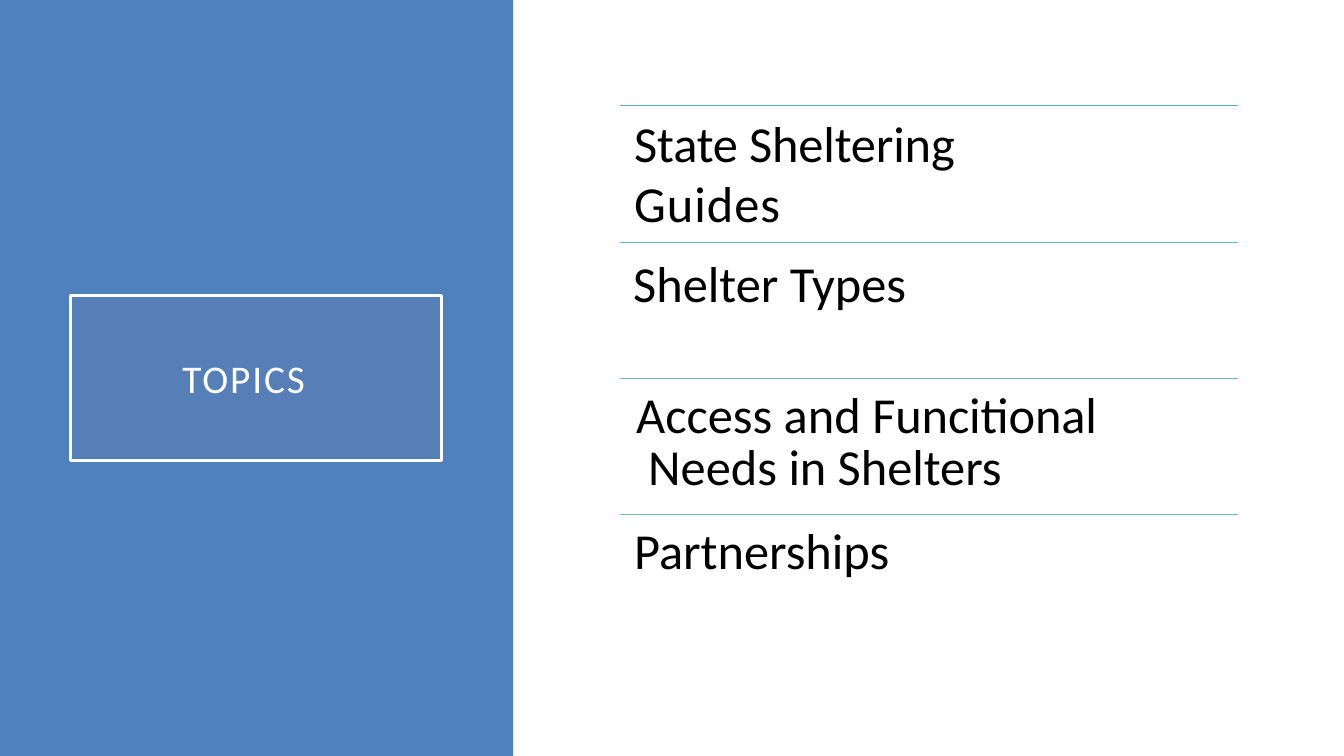
"""Build the Topics slide: a blue side panel and four ruled topic rows."""
from dataclasses import dataclass

from lxml.etree import SubElement
from pptx import Presentation
from pptx.dml.color import RGBColor
from pptx.enum.shapes import MSO_CONNECTOR as Connector, MSO_SHAPE as Preset
from pptx.enum.text import MSO_ANCHOR as Anchor, MSO_AUTO_SIZE as AutoSize, PP_ALIGN as Align
from pptx.oxml.ns import qn
from pptx.util import Emu, Inches, Pt

WIDTH, HEIGHT = Inches(13.33), Inches(7.5)
RULE_LEFT, RULE_RIGHT = 46.14, 92.12
FIRST_ROW, ROW_STEP = 14, 18
FONT = "Calibri"
COLOURS = {
    "panel": "4F81BD",
    "tint": "7E7A9A",
    "white": "FFFFFF",
    "text": "000000",
}


@dataclass(frozen=True)
class Span:
    """A run of text with its letter spacing in points."""
    text: str
    spacing: float = 0


@dataclass(frozen=True)
class Topic:
    """A topic row, with its box in percent of the slide."""
    spans: tuple[Span, ...]
    rule: str
    left: float
    drop: float
    width: float
    height: float
    inset: float = 0.01
    before: float = 1
    leading: float | None = None
    hang: float = 0
    is_title: bool = False


TOPICS = (
    Topic((Span("State Sheltering ", -0.1), Span("Guides", 0.7)),
          "57B6C0", 47.11, 0.67, 34.5, 16.4, is_title=True),
    Topic((Span("Shelter Types"),), "61BEBA", 47.04, 1.2, 21.08, 8.4),
    Topic((Span("Access and "), Span("Funcitional ", -0.1), Span("Needs "),
           Span("in ", -0.1), Span("Shelters")),
          "6CBDAF", 47.26, 0.4, 34.58, 15.33, inset=0.1, before=7, leading=37.5, hang=0.12),
    Topic((Span("Partnerships"),), "75BCA7", 47.11, 0.53, 33.31, 8.4),
)


def across(percent: float) -> Emu:
    """Turn a percentage of the slide width into a length."""
    return Emu(round(WIDTH * percent / 100))


def down(percent: float) -> Emu:
    """Turn a percentage of the slide height into a length."""
    return Emu(round(HEIGHT * percent / 100))


def colour(value: str) -> RGBColor:
    """Turn a hex string into a colour."""
    return RGBColor.from_string(value)


def set_frame(frame, anchor: Anchor, top: float = 0) -> None:
    """Set wrapping, anchor and insets of a text frame."""
    frame.word_wrap = True
    frame.auto_size = AutoSize.NONE
    frame.vertical_anchor = anchor
    frame.margin_left = frame.margin_right = frame.margin_bottom = 0
    frame.margin_top = Inches(top)


def add_spans(para, spans: tuple[Span, ...], size: float, ink: str) -> None:
    """Add formatted runs to a left-aligned paragraph."""
    para.alignment = Align.LEFT
    for item in spans:
        span = para.add_run()
        span.text = item.text
        span.font.name = FONT
        span.font.size = Pt(size)
        span.font.color.rgb = colour(ink)
        span._r.get_or_add_rPr().set("spc", str(round(item.spacing * 100)))


def indent(para, left: float, first: float = 0) -> None:
    """Set the left margin and first-line indent in inches."""
    props = para._p.get_or_add_pPr()
    props.set("marL", str(Inches(left)))
    props.set("indent", str(Inches(first)))


def add_rectangle(page, left: float, top: float, width: float, height: float, fill: str):
    """Add a plain filled rectangle, placed in percent of the slide."""
    box = page.shapes.add_shape(
        Preset.RECTANGLE, across(left), down(top), across(width), down(height))
    box.shadow.inherit = False
    box.fill.solid()
    box.fill.fore_color.rgb = colour(fill)
    box.line.fill.background()
    return box


def add_panel(page) -> None:
    """Draw the side panel and its framed heading."""
    add_rectangle(page, 0, 0, 38.18, 100, COLOURS["panel"])
    box = add_rectangle(page, 5.25, 39.07, 27.61, 21.87, COLOURS["tint"])
    tint = box._element.spPr.find(qn("a:solidFill")).find(qn("a:srgbClr"))
    SubElement(tint, qn("a:alpha")).set("val", "15000")
    box.line.color.rgb = colour(COLOURS["white"])
    box.line.width = Pt(2.5)
    set_frame(box.text_frame, Anchor.MIDDLE)
    para = box.text_frame.paragraphs[0]
    indent(para, 1.11)
    add_spans(para, (Span("TOPICS", 1.4),), 28, COLOURS["white"])


def add_topic(page, topic: Topic, row: int) -> None:
    """Draw one rule and the topic below it."""
    top = FIRST_ROW + ROW_STEP * row
    rule = page.shapes.add_connector(
        Connector.STRAIGHT, across(RULE_LEFT), down(top), across(RULE_RIGHT), down(top))
    rule.line.color.rgb = colour(topic.rule)
    rule.line.width = Pt(0.5)
    SubElement(rule._element.spPr, qn("a:effectLst"))

    box = page.shapes.title if topic.is_title else page.shapes.add_textbox(0, 0, 0, 0)
    box.left, box.top = across(topic.left), down(top + topic.drop)
    box.width, box.height = across(topic.width), down(topic.height)
    set_frame(box.text_frame, Anchor.TOP, topic.inset)
    para = box.text_frame.paragraphs[0]
    indent(para, 0.01 + topic.hang, -topic.hang)
    para.space_before = Pt(topic.before)
    if topic.leading:
        para.line_spacing = Pt(topic.leading)
    add_spans(para, topic.spans, 36, COLOURS["text"])


def main() -> None:
    """Build and save the deck."""
    deck = Presentation()
    deck.slide_width, deck.slide_height = WIDTH, HEIGHT
    page = deck.slides.add_slide(deck.slide_layouts[5])
    add_panel(page)
    for row, topic in enumerate(TOPICS):
        add_topic(page, topic, row)
    deck.save("out.pptx")


if __name__ == "__main__":
    main()
